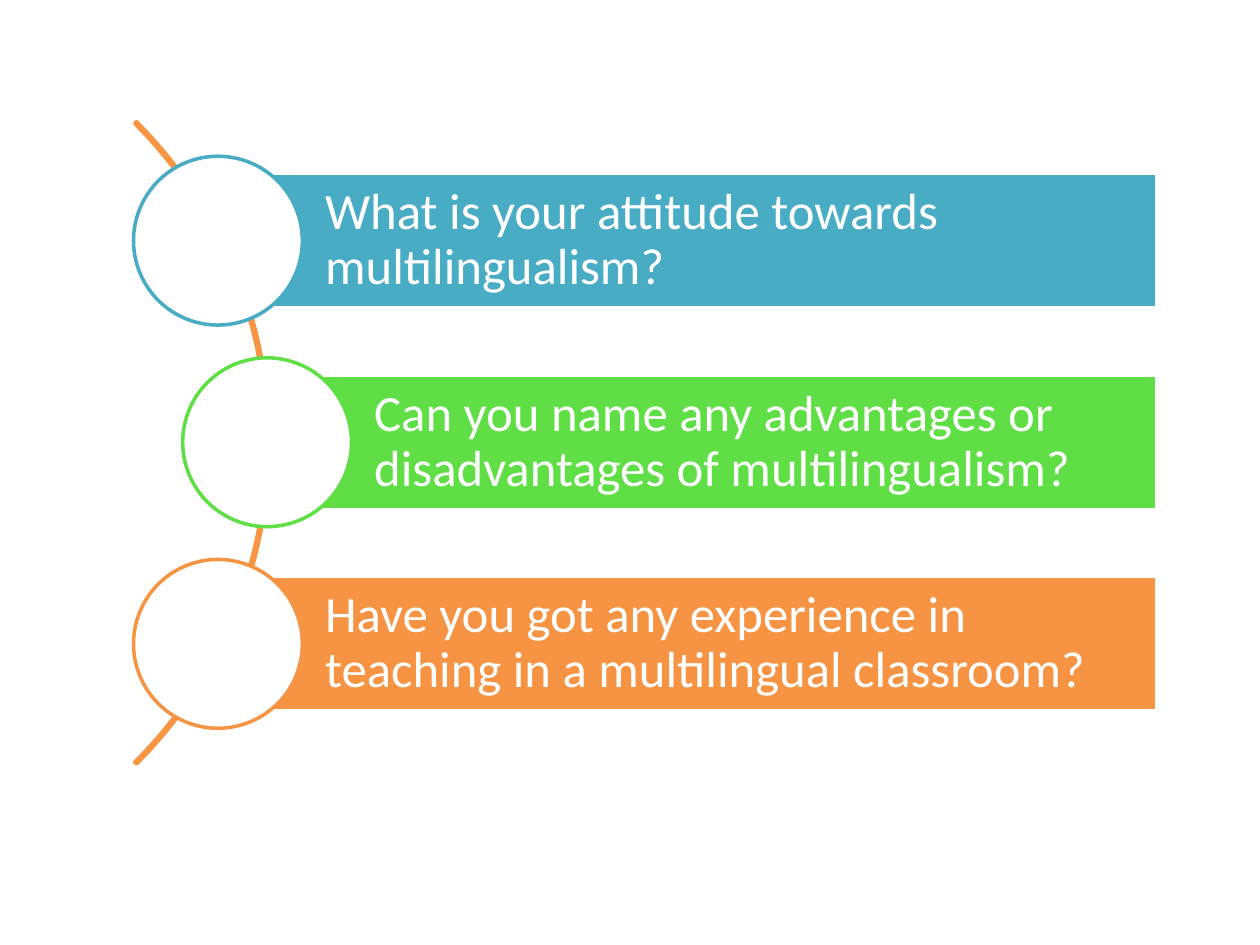
from pptx import Presentation
from pptx import util as u
from pptx.dml import color
from pptx.enum import shapes, text

QUESTIONS = [
    ("What is your attitude towards multilingualism?", "49ACC5", 1.73),
    ("Can you name any advantages or disadvantages of multilingualism?", "5FDF45", 2.12),
    ("Have you got any experience in teaching in a multilingual classroom?", "F69444", 1.73),
]
WHITE = "FFFFFF"
ARC_COLOUR = "F79543"
ARC_BOX = (-5.07, -0.09, 7.21, 7.21)
ARC_ADJUSTMENTS = (189, 27, 0.003)
BAR_RIGHT, BAR_HEIGHT = 9.18, 1.07
CIRCLE_SIZE = 1.34
FIRST_CENTRE, PITCH = 1.91, 1.6
FRAME_FORMAT = {
    "word_wrap": True,
    "vertical_anchor": text.MSO_ANCHOR.MIDDLE,
    "margin_left": u.Inches(0.85),
    "margin_top": u.Inches(0.08),
    "margin_right": u.Inches(0.08),
    "margin_bottom": u.Inches(0.08),
}
PARAGRAPH_FORMAT = {"alignment": text.PP_ALIGN.LEFT, "line_spacing": 0.9}
FONT_FORMAT = {"name": "Calibri", "size": u.Pt(29)}


def set_all(target, values):
    for name, value in values.items():
        setattr(target, name, value)


def paint(colour_format, value):
    colour_format.rgb = color.RGBColor.from_string(value)


def add_shape(slide, kind, box, fill, line):
    shape = slide.shapes.add_shape(kind, *(u.Inches(length) for length in box))
    shape.shadow.inherit = False
    if fill:
        shape.fill.solid()
        paint(shape.fill.fore_color, fill)
    else:
        shape.fill.background()
    paint(shape.line.color, line)
    shape.line.width = u.Pt(2)
    return shape


def add_question(slide, question, colour, left, centre):
    bar_box = (left, centre - BAR_HEIGHT / 2, BAR_RIGHT - left, BAR_HEIGHT)
    bar = add_shape(slide, shapes.MSO_SHAPE.RECTANGLE, bar_box, colour, WHITE)
    set_all(bar.text_frame, FRAME_FORMAT)
    paragraph = bar.text_frame.paragraphs[0]
    paragraph.text = question
    set_all(paragraph, PARAGRAPH_FORMAT)
    set_all(paragraph.font, FONT_FORMAT)
    paint(paragraph.font.color, WHITE)
    radius = CIRCLE_SIZE / 2
    circle_box = (left - radius, centre - radius, CIRCLE_SIZE, CIRCLE_SIZE)
    add_shape(slide, shapes.MSO_SHAPE.OVAL, circle_box, WHITE, colour)


def main():
    presentation = Presentation()
    presentation.slide_width = u.Inches(10)
    presentation.slide_height = u.Inches(7.5)
    slide = presentation.slides.add_slide(presentation.slide_layouts[6])
    arc = add_shape(slide, shapes.MSO_SHAPE.BLOCK_ARC, ARC_BOX, None, ARC_COLOUR)
    for index, value in enumerate(ARC_ADJUSTMENTS):
        arc.adjustments[index] = value
    for index, (question, colour, left) in enumerate(QUESTIONS):
        add_question(slide, question, colour, left, FIRST_CENTRE + index * PITCH)
    presentation.save("out.pptx")


if __name__ == "__main__":
    main()
